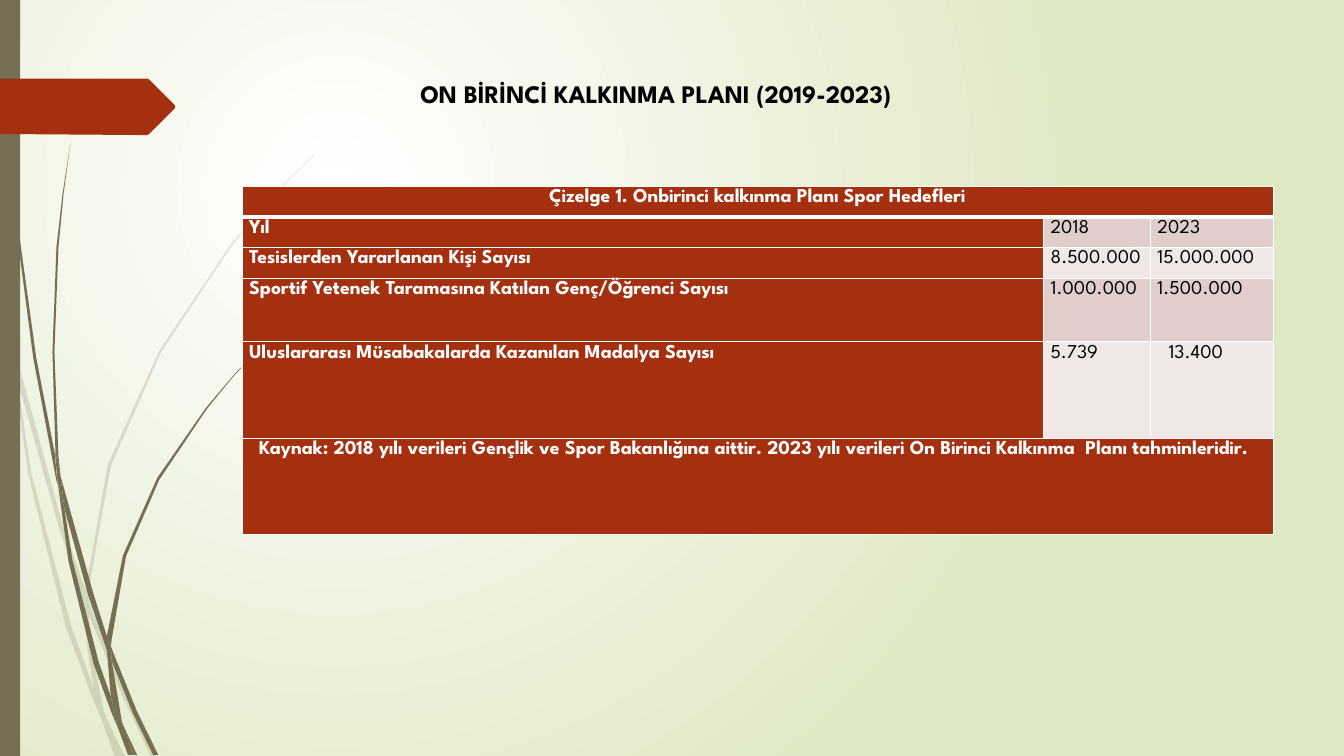
from lxml import etree
from pptx import Presentation
from pptx import util as u
from pptx.dml.color import RGBColor
from pptx.enum import lang, shapes, text
from pptx.oxml.ns import qn

TITLE = "ON BİRİNCİ KALKINMA PLANI (2019-2023)"
HEADING = "Çizelge 1. Onbirinci kalkınma Planı Spor Hedefleri"
TARGETS = [
    ("Yıl", "2018", "2023"),
    ("Tesislerden Yararlanan Kişi Sayısı", "8.500.000", "15.000.000"),
    ("Sportif Yetenek Taramasına Katılan Genç/Öğrenci Sayısı", "1.000.000", "1.500.000"),
    ("Uluslararası Müsabakalarda Kazanılan Madalya Sayısı", "5.739", "13.400"),
]
SOURCE = ("Kaynak: 2018 yılı verileri Gençlik ve Spor Bakanlığına aittir. "
          "2023 yılı verileri On Birinci Kalkınma  Planı tahminleridir.")
INDENTED = {"13.400": 11, SOURCE: 10}

FONT = "League Spartan"
WHITE = RGBColor(0xFF, 0xFF, 0xFF)
BLACK = RGBColor(0, 0, 0)
MEADOW = RGBColor(0xDF, 0xE8, 0xC4)
OLIVE = RGBColor(0x76, 0x6F, 0x54)
RUST = RGBColor(0xA5, 0x30, 0x10)
BANDS = [RGBColor(0xE1, 0xCD, 0xCC), RGBColor(0xF0, 0xE8, 0xE7)]

UNIT = u.Inches(0.01)
WIDTH, HEIGHT = 1333, 750
COLUMNS = [795, 106, 122]
ROWS = [30, 30.5, 30.5, 63, 96, 95.5]

# Outlines are x, y corners on the UNIT grid.
PALE_BLADES = [
    [(11, 350), (9, 322), (0, 282), (0, 299), (10, 344)],
    [(58, 522), (84, 599), (85, 586), (62, 520), (14, 345), (17, 376)],
    [(92, 607), (88, 596), (88, 610), (123, 694), (150, 751), (155, 751), (127, 692)],
    [(119, 751), (124, 751), (105, 711)],
    [(93, 683), (70, 619), (31, 469), (17, 376), (11, 350), (28, 470), (65, 621),
     (92, 693), (101, 714), (99, 707)],
    [(84, 599), (87, 646), (93, 683), (96, 692), (105, 711), (103, 706), (91, 646),
     (88, 610), (88, 608)],
    [(88, 584), (110, 462), (160, 349), (229, 245), (268, 198), (290, 175), (312, 154),
     (312, 153), (289, 175), (268, 197), (228, 244), (158, 348), (107, 461), (85, 584),
     (85, 586), (88, 596)],
    [(101, 714), (114, 751), (119, 751)],
    [(88, 608), (88, 610), (88, 596), (85, 586), (84, 599)],
    [(96, 692), (93, 683), (99, 707), (101, 714), (119, 751), (105, 711)],
]
DARK_BLADES = [
    [(7, 110), (17, 233), (33, 355), (56, 477), (57, 481), (55, 457), (55, 453), (36, 355),
     (19, 232), (8, 109), (5, 48), (4, 0), (3, 0), (4, 48)],
    [(88, 592), (106, 645), (106, 633), (106, 631), (93, 590), (60, 472), (64, 505)],
    [(113, 649), (110, 641), (111, 656), (132, 708), (152, 749), (157, 749), (136, 706)],
    [(110, 691), (98, 657), (72, 556), (64, 505), (57, 477), (68, 557), (93, 659),
     (111, 708), (117, 722), (116, 717)],
    [(60, 472), (58, 453), (54, 349), (58, 245), (63, 193), (70, 141), (62, 193),
     (56, 245), (52, 349), (55, 449)],
    [(133, 749), (136, 749), (122, 719)],
    [(57, 477), (64, 505), (60, 472), (55, 449), (55, 453)],
    [(111, 633), (125, 552), (158, 476), (205, 406), (231, 374), (245, 359), (261, 344),
     (260, 344), (245, 358), (231, 373), (204, 405), (156, 474), (122, 551), (106, 631),
     (110, 641)],
    [(117, 722), (127, 749), (131, 749)],
    [(106, 645), (110, 691), (116, 706), (122, 719), (121, 716), (111, 656), (109, 651)],
    [(106, 645), (109, 651), (111, 656), (110, 641), (106, 631), (106, 633)],
    [(116, 706), (110, 691), (116, 717), (117, 722), (130, 749), (133, 749), (122, 719)],
]
TAG = [(173, 108), (148, 133), (146, 134), (136, 134), (0, 133), (0, 78), (136, 78),
       (146, 78), (148, 79), (173, 104), (174, 106)]


def write(frame, words, size=14, color=WHITE, bold=True, align=None, spacing=None):
    paragraph = frame.paragraphs[0]
    paragraph.alignment, paragraph.line_spacing = align, spacing
    run = paragraph.add_run()
    run.text = words
    run.font.name, run.font.size, run.font.bold = FONT, u.Pt(size), bold
    run.font.language_id = lang.MSO_LANGUAGE_ID.TURKISH
    run.font.color.rgb = color


def paint(shape, color, opacity=100):
    shape.shadow.inherit = False
    shape.fill.solid()
    shape.fill.fore_color.rgb = color
    shape.line.fill.background()
    if opacity < 100:
        tint = shape.element.spPr.find(".//" + qn("a:srgbClr"))
        etree.SubElement(tint, qn("a:alpha")).set("val", str(opacity * 1000))


def draw_outline(slide, outline, color, opacity=100):
    builder = slide.shapes.build_freeform(*outline[0], scale=UNIT)
    builder.add_line_segments(outline[1:], close=True)
    paint(builder.convert_to_shape(), color, opacity)


def draw_background(slide):
    fill = slide.background.fill
    fill.gradient()
    for stop, color, position in zip(fill.gradient_stops, (WHITE, MEADOW), (0, 1)):
        stop.color.rgb, stop.position = color, position
    gradient = slide.element.find(".//" + qn("a:gradFill"))
    circle = etree.Element(qn("a:path"), {"path": "circle"})
    etree.SubElement(circle, qn("a:fillToRect"),
                     {"l": "50000", "t": "50000", "r": "100000", "b": "100000"})
    gradient.replace(gradient.find(qn("a:lin")), circle)


def format_cell(cell, row, column, words):
    properties = cell._tc.get_or_add_tcPr()
    for side in "LRTB":
        heavy = (row, side) in {(0, "B"), (1, "T")}
        border = etree.SubElement(properties, qn("a:ln" + side),
                                  {"w": str(u.Pt(3 if heavy else 1))})
        solid = etree.SubElement(border, qn("a:solidFill"))
        etree.SubElement(solid, qn("a:srgbClr")).set("val", str(WHITE))
    label = column == 0 or row in (0, len(ROWS) - 1)
    cell.fill.solid()
    cell.fill.fore_color.rgb = RUST if label else BANDS[(row - 1) % 2]
    cell.margin_left = (7 + INDENTED.get(words, 0)) * UNIT
    cell.margin_right = 7 * UNIT
    cell.margin_top = cell.margin_bottom = 0
    if words:
        write(cell.text_frame, words, color=WHITE if label else BLACK, bold=label,
              align=text.PP_ALIGN.JUSTIFY if row else text.PP_ALIGN.CENTER, spacing=1.15)


def draw_targets(slide):
    content = [(HEADING, "", ""), *TARGETS, (SOURCE, "", "")]
    table = slide.shapes.add_table(
        len(ROWS), len(COLUMNS), 240 * UNIT, 185 * UNIT,
        sum(COLUMNS) * UNIT, int(sum(ROWS) * UNIT)).table
    table.horz_banding = False
    for column, width in zip(table.columns, COLUMNS):
        column.width = width * UNIT
    for i, (height, line) in enumerate(zip(ROWS, content)):
        table.rows[i].height = int(height * UNIT)
        for j, words in enumerate(line):
            format_cell(table.cell(i, j), i, j, words)
    for i in (0, len(ROWS) - 1):
        table.cell(i, 0).merge(table.cell(i, len(COLUMNS) - 1))


def main():
    """Build the sports targets slide."""
    deck = Presentation()
    deck.slide_width, deck.slide_height = WIDTH * UNIT, HEIGHT * UNIT
    slide = deck.slides.add_slide(deck.slide_layouts[6])
    draw_background(slide)
    for blades, opacity in ((PALE_BLADES, 20), (DARK_BLADES, 100)):
        for blade in blades:
            draw_outline(slide, blade, OLIVE, opacity)
    band = slide.shapes.add_shape(shapes.MSO_SHAPE.RECTANGLE, 0, 0, 20 * UNIT, HEIGHT * UNIT)
    paint(band, OLIVE)
    draw_outline(slide, TAG, RUST)
    title = slide.shapes.add_textbox(407 * UNIT, 73 * UNIT, 519 * UNIT, 40 * UNIT)
    title.text_frame.word_wrap = False
    write(title.text_frame, TITLE, size=18, color=BLACK)
    draw_targets(slide)
    deck.save("out.pptx")


if __name__ == "__main__":
    main()
